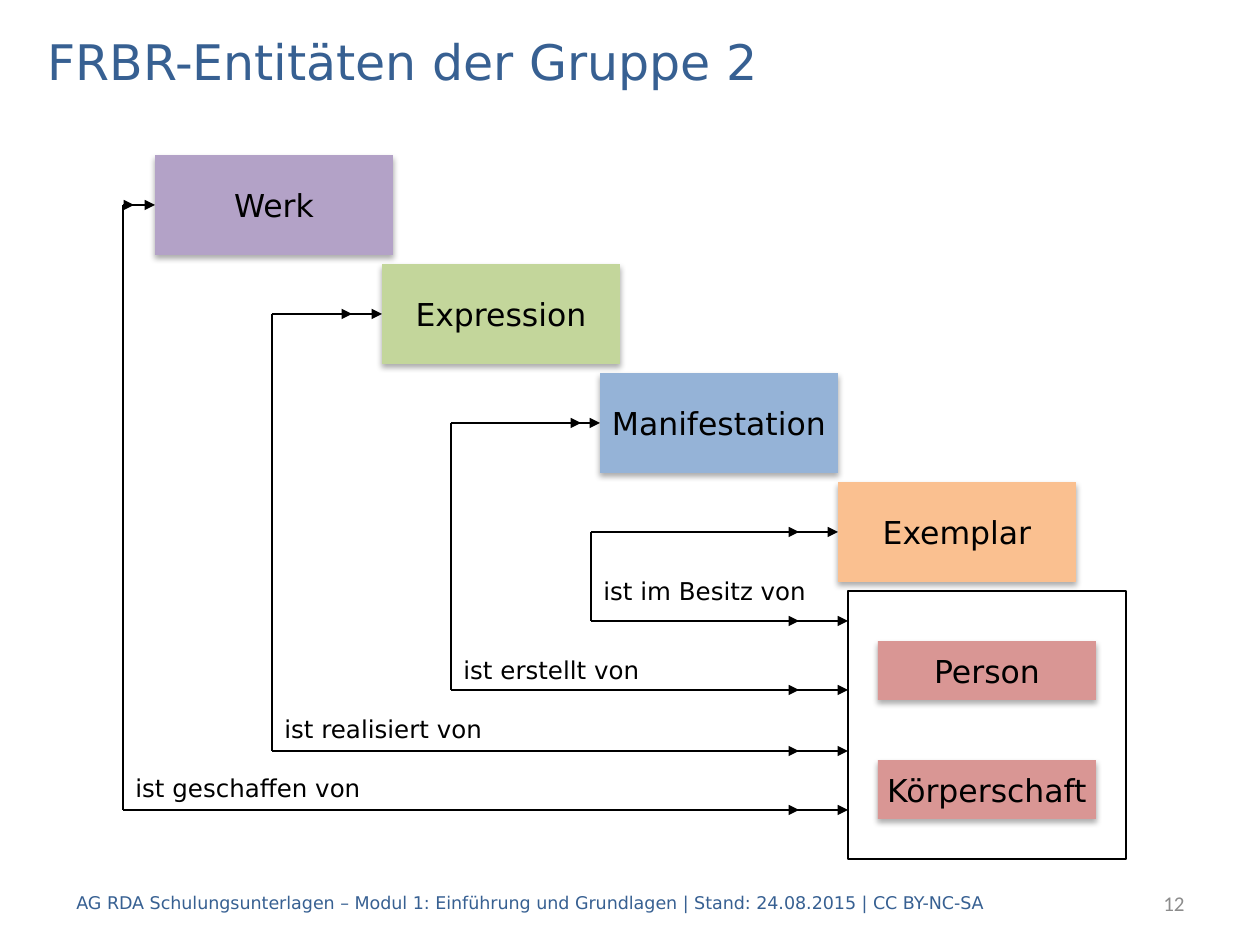
from lxml import etree
from pptx import Presentation, util as u
from pptx.dml.color import RGBColor
from pptx.enum import shapes, text
from pptx.oxml.ns import qn

# Content, lengths in px (126 to the inch)
HUE = {"ink": "000000", "head": "376092", "page": "8C8C8C", "actor": "D99694",
       "Werk": "B3A2C7", "Expression": "C3D69B",
       "Manifestation": "95B3D7", "Exemplar": "FAC090"}
SANS = "DejaVu Sans"
TITLE = "FRBR-Entitäten der Gruppe 2"
FOOT = ("AG RDA Schulungsunterlagen – Modul 1: Einführung und Grundlagen"
        " | Stand: 24.08.2015 | CC BY-NC-SA")
# entity, box left, stem x, inner arrow tip, lower y, label, label top, label width
ROWS = [
    ("Werk", 155, 123, 134, 810, "ist geschaffen von", 767, 506),
    ("Expression", 382, 272, 352, 751, "ist realisiert von", 708, 506),
    ("Manifestation", 600, 451, 581, 690, "ist erstellt von", 649, 248),
    ("Exemplar", 838, 591, 799, 621, "ist im Besitz von", 570, 248),
]
ACTORS = [("Person", 641), ("Körperschaft", 760)]
TOP, STEP, WIDE, HIGH = 155, 109, 238, 100
FRAME = (848, 591, 278, 268)
INNER = 799

LEFT, MID, RIGHT = text.PP_ALIGN.LEFT, text.PP_ALIGN.CENTER, text.PP_ALIGN.RIGHT
RECT, FLOW = shapes.MSO_SHAPE.RECTANGLE, shapes.MSO_SHAPE.FLOWCHART_PROCESS


def px(n):
    return u.Emu(round(n * 914400 / 126))


def rgb(name):
    return RGBColor.from_string(HUE[name])


prs = Presentation()
prs.slide_width, prs.slide_height = px(1260), px(945)
slide = prs.slides.add_slide(prs.slide_layouts[6])
draw = slide.shapes


def write(item, words, size, hue="ink", face=SANS, align=LEFT, wrap=True, mid=True):
    frame = item.text_frame
    frame.word_wrap = wrap
    anchor = text.MSO_ANCHOR.MIDDLE if mid else text.MSO_ANCHOR.TOP
    frame.vertical_anchor = anchor
    para = frame.paragraphs[0]
    para.alignment = align
    run = para.add_run()
    run.text = words
    for key, val in {"size": u.Pt(size), "name": face}.items():
        setattr(run.font, key, val)
    run.font.color.rgb = rgb(hue)


def label(box, words, size, **form):
    write(draw.add_textbox(*map(px, box)), words, size, **form)


def shade(item):
    glow = item._element.spPr.find(qn("a:effectLst"))
    drop = etree.SubElement(glow, qn("a:outerShdw"), blurRad="44450",
                            dist="27940", dir="5400000", rotWithShape="0")
    tint = etree.SubElement(drop, qn("a:srgbClr"), val=HUE["ink"])
    etree.SubElement(tint, qn("a:alpha"), val="32000")


def block(kind, box, words, hue):
    item = draw.add_shape(kind, *map(px, box))
    item.shadow.inherit = False
    item.fill.solid()
    item.fill.fore_color.rgb = rgb(hue)
    item.line.fill.background()
    shade(item)
    write(item, words, 18, align=MID, wrap=False)


def line(x1, y1, x2, y2, tip=True):
    item = draw.add_connector(shapes.MSO_CONNECTOR.STRAIGHT,
                              *map(px, (x1, y1, x2, y2)))
    item.line.width = u.Pt(0.75)
    item.line.color.rgb = rgb("ink")
    if tip:
        etree.SubElement(item.line._get_or_add_ln(), qn("a:tailEnd"), type="triangle")
    etree.SubElement(item._element.spPr, qn("a:effectLst"))


# Title and footer
label((35, 25, 1191, 71), TITLE, 28, hue="head")
label((64, 878, 983, 50), FOOT, 10, hue="head")
label((1106, 878, 91, 50), "12", 12, hue="page", face="Calibri", align=RIGHT)

# Frame with the two actors
frame = draw.add_shape(RECT, *map(px, FRAME))
frame.shadow.inherit = False
frame.fill.background()
frame.line.width = u.Pt(0.75)
frame.line.color.rgb = rgb("ink")
for name, top in ACTORS:
    block(RECT, (878, top, 218, 59), name, "actor")

# Relations: a stem with double arrows at both ends
for i, (name, left, stem, inner, low, words, top, wide) in enumerate(ROWS):
    high = TOP + i * STEP + HIGH // 2
    line(stem, high, stem, low, tip=False)
    for y, ends in ((high, (inner, left)), (low, (INNER, FRAME[0]))):
        for end in ends:
            line(stem, y, end, y)
    label((stem, top, wide, 42), words, 14, mid=False)
line(134, 234, 134, 234)  # lone arrowhead beside the first stem

# Entity boxes, stepping down
for i, (name, left, *_) in enumerate(ROWS):
    block(FLOW, (left, TOP + i * STEP, WIDE, HIGH), name, name)

prs.save("out.pptx")
